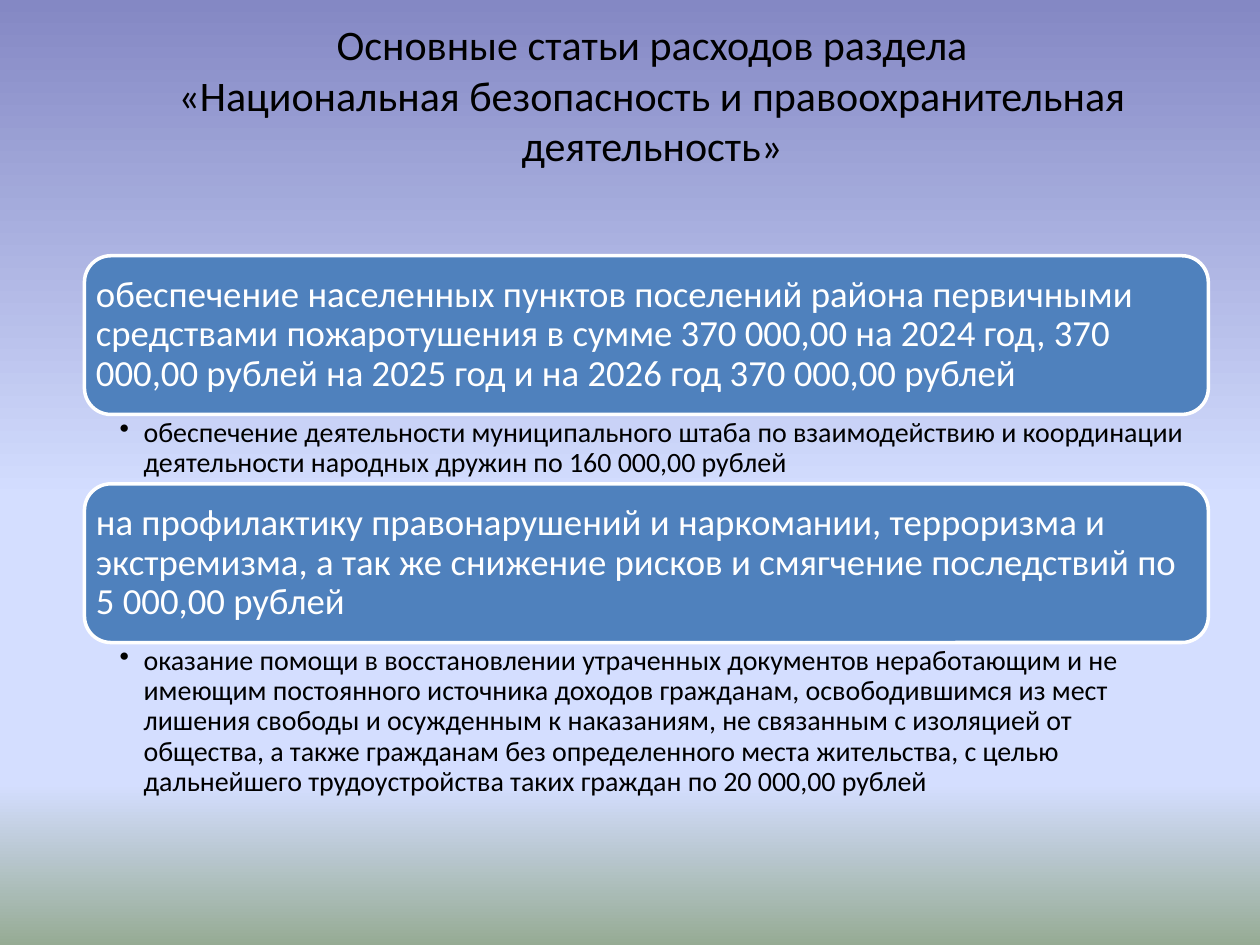
from lxml import etree
from pptx import Presentation
from pptx.dml.color import RGBColor
from pptx.enum.shapes import MSO_SHAPE
from pptx.enum.text import MSO_ANCHOR, MSO_AUTO_SIZE, PP_ALIGN
from pptx.oxml.ns import qn
from pptx.util import Inches, Pt

ROUND = MSO_SHAPE.ROUNDED_RECTANGLE
TOP, MIDDLE = MSO_ANCHOR.TOP, MSO_ANCHOR.MIDDLE
LEFT, CENTER = PP_ALIGN.LEFT, PP_ALIGN.CENTER
FIXED = MSO_AUTO_SIZE.NONE
FONT = "Calibri"
COLORS = {"text": "000000", "card": "4F81BD", "light": "FFFFFF"}
STOPS = [(0, "8488C4"), (53, "D4DEFF"), (83, "D4DEFF"), (100, "96AB94")]
TITLE = ("Основные статьи расходов раздела\v"
         "«Национальная безопасность и правоохранительная деятельность»")
CARD_H = 1.26
ITEMS = [
    ("обеспечение населенных пунктов поселений района первичными средствами "
     "пожаротушения в сумме 370 000,00 на 2024 год, 370 000,00 рублей на 2025 год "
     "и на 2026 год 370 000,00 рублей",
     "обеспечение деятельности муниципального штаба по взаимодействию и координации "
     "деятельности народных дружин по 160 000,00 рублей", 0.55),
    ("на профилактику правонарушений и наркомании, терроризма и экстремизма, "
     "а так же снижение рисков и смягчение последствий по 5 000,00 рублей",
     "оказание помощи в восстановлении утраченных документов неработающим и не "
     "имеющим постоянного источника доходов гражданам, освободившимся из мест "
     "лишения свободы и осужденным к наказаниям, не связанным с изоляцией от "
     "общества, а также гражданам без определенного места жительства, с целью "
     "дальнейшего трудоустройства таких граждан по 20 000,00 рублей", 1.28),
]


def color(name):
    return RGBColor.from_string(COLORS[name])


def write(shape, text, size, tone, align, anchor, pads, space):
    frame = shape.text_frame
    frame.text = text
    frame.word_wrap = True
    frame.auto_size = FIXED
    frame.vertical_anchor = anchor
    (frame.margin_left, frame.margin_top,
     frame.margin_right, frame.margin_bottom) = [Inches(p) for p in pads]
    par = frame.paragraphs[0]
    par.alignment = align
    par.line_spacing = space
    for run in par.runs:
        run.font.name = FONT
        run.font.size = Pt(size)
        run.font.color.rgb = color(tone)
    return par


def paint(slide):
    fill = slide.background.fill
    fill.gradient()
    fill.gradient_angle = 270
    stops = slide.element.find(".//" + qn("a:gsLst"))
    for old in list(stops):
        stops.remove(old)
    for pos, tone in STOPS:
        stop = etree.SubElement(stops, qn("a:gs"), pos=str(pos * 1000))
        etree.SubElement(stop, qn("a:srgbClr"), val=tone)


def add_title(slide, left, top, width, height):
    title = slide.shapes.title
    title.left, title.top = Inches(left), Inches(top)
    title.width, title.height = Inches(width), Inches(height)
    write(title, TITLE, 24, "text", CENTER, MIDDLE, (0.1, 0.05, 0.1, 0.05), 1.0)


def add_card(slide, text, left, top, width, height):
    card = slide.shapes.add_shape(
        ROUND, Inches(left), Inches(top), Inches(width), Inches(height))
    card.shadow.inherit = False
    card.fill.solid()
    card.fill.fore_color.rgb = color("card")
    card.line.color.rgb = color("light")
    card.line.width = Pt(2)
    write(card, text, 21, "light", LEFT, MIDDLE, (0.03,) * 4, 0.9)


def add_note(slide, text, left, top, width, height):
    note = slide.shapes.add_textbox(
        Inches(left), Inches(top), Inches(width), Inches(height))
    par = write(note, text, 16, "text", LEFT, TOP, (0.28, 0.03, 0.16, 0.03), 0.9)
    props = par._p.get_or_add_pPr()
    props.set("marL", str(Inches(0.19)))
    props.set("indent", str(-Inches(0.19)))
    etree.SubElement(props, qn("a:buChar"), char="•")


def add_list(slide, left, top, width):
    for head, note, height in ITEMS:
        add_card(slide, head, left, top, width, CARD_H)
        add_note(slide, note, left, top + CARD_H, width, height)
        top += CARD_H + height


def main():
    deck = Presentation()
    deck.slide_width, deck.slide_height = Inches(10), Inches(7.5)
    slide = deck.slides.add_slide(deck.slide_layouts[5])
    paint(slide)
    add_title(slide, 0.35, 0.21, 9.65, 1.08)
    add_list(slide, 0.67, 2.03, 8.92)
    deck.save("out.pptx")


if __name__ == "__main__":
    main()
